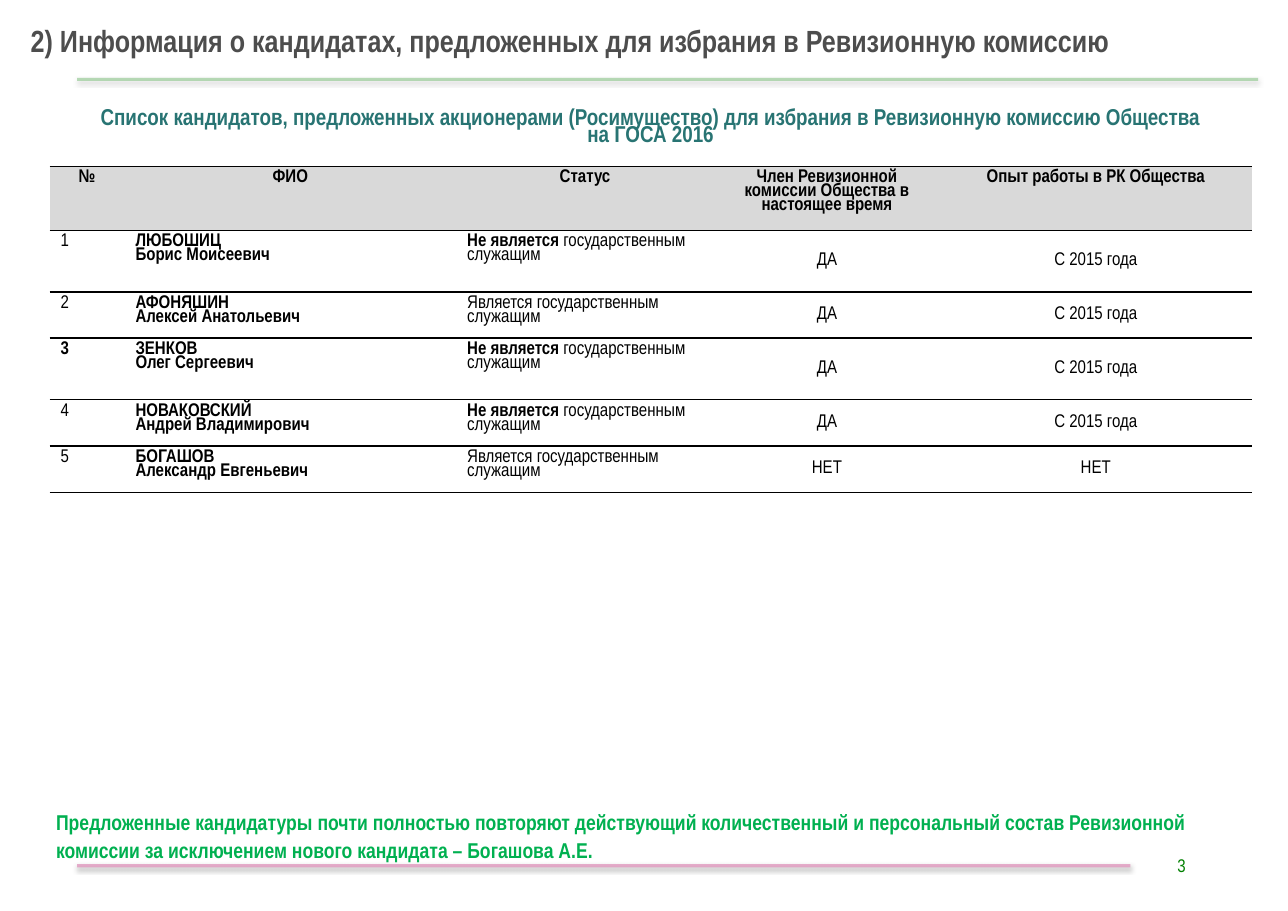
from dataclasses import dataclass

from lxml.etree import SubElement
from pptx import Presentation
from pptx.dml.color import RGBColor
from pptx.enum.shapes import MSO_CONNECTOR
from pptx.enum.text import MSO_ANCHOR, PP_ALIGN
from pptx.oxml import parse_xml
from pptx.oxml.ns import nsdecls, qn
from pptx.util import Inches, Pt


@dataclass(frozen=True)
class Theme:
    font: str = "Arial Narrow"
    black: str = "000000"
    gray: str = "4D4D4D"
    teal: str = "287473"
    lime: str = "00B050"
    green: str = "008000"
    band: str = "D9D9D9"
    mint: str = "9ACC99"
    pink: str = "DF8EB9"
    title: int = 20
    head: int = 15
    note: int = 14
    body: int = 12


class Page:
    """Draws styled elements on one slide, with lengths in percent of its size."""

    def __init__(self, deck, theme):
        self.deck, self.theme = deck, theme
        self.slide = deck.slides.add_slide(deck.slide_layouts[6])

    def wide(self, share):
        return round(self.deck.slide_width * share / 100)

    def high(self, share):
        return round(self.deck.slide_height * share / 100)

    def area(self, left, top, width, height):
        return self.wide(left), self.high(top), self.wide(width), self.high(height)

    def fill_text(self, frame, lines, size, color, bold=False, align=PP_ALIGN.LEFT, pitch=1.0, lead=""):
        for index, line in enumerate(lines):
            para = frame.paragraphs[0] if index == 0 else frame.add_paragraph()
            para.alignment, para.line_spacing = align, pitch
            font = para.font
            font.name, font.size, font.bold = self.theme.font, Pt(size), bold
            font.color.rgb = RGBColor.from_string(color)
            if lead:
                run = para.add_run()
                run.text, run.font.bold = lead, True
            para.add_run().text = line

    def text(self, area, line, size, color, inset=None, anchor=MSO_ANCHOR.TOP, **style):
        frame = self.slide.shapes.add_textbox(*self.area(*area)).text_frame
        frame.word_wrap, frame.vertical_anchor = True, anchor
        if inset is not None:
            frame.margin_left = Inches(inset)
            frame.margin_right = frame.margin_top = frame.margin_bottom = 0
        self.fill_text(frame, [line], size, color, **style)

    def rule(self, left, right, top, color):
        line = self.slide.shapes.add_connector(
            MSO_CONNECTOR.STRAIGHT, self.wide(left), self.high(top), self.wide(right), self.high(top))
        line.line.width = Pt(2)
        line.line.color.rgb = RGBColor.from_string(color)
        props = line.element.spPr
        SubElement(props.find(".//" + qn("a:srgbClr")), qn("a:alpha"), val="70000")
        props.append(parse_xml(
            f'<a:effectLst {nsdecls("a")}><a:outerShdw blurRad="{Pt(3.1)}" dist="{Pt(1.6)}" '
            f'dir="5400000" rotWithShape="0"><a:srgbClr val="{self.theme.black}">'
            '<a:alpha val="38000"/></a:srgbClr></a:outerShdw></a:effectLst>'))

    def table(self, left, top, cols, rows):
        frame = self.slide.shapes.add_table(
            len(rows), len(cols), *self.area(left, top, sum(cols), sum(rows)))
        table = frame.table
        table.first_row = table.horz_banding = False
        for col, share in zip(table.columns, cols):
            col.width = self.wide(share)
        for row, share in zip(table.rows, rows):
            row.height = self.high(share)
        for index, row in enumerate(table.rows):
            for cell in row.cells:
                cell.fill.background()
                self.edge(cell, index > 0)
        return table

    def edge(self, cell, top):
        solid = f'<a:solidFill><a:srgbClr val="{self.theme.black}"/></a:solidFill>'
        sides = {"lnL": False, "lnR": False, "lnT": top, "lnB": True}
        for index, (side, shown) in enumerate(sides.items()):
            fill = solid if shown else "<a:noFill/>"
            cell._tc.get_or_add_tcPr().insert(index, parse_xml(
                f'<a:{side} {nsdecls("a")} w="{Pt(1)}">{fill}</a:{side}>'))

    def cell(self, cell, lines, middle=False, fill=None, size=None, color=None, **style):
        cell.vertical_anchor = MSO_ANCHOR.MIDDLE if middle else MSO_ANCHOR.TOP
        if fill:
            cell.fill.solid()
            cell.fill.fore_color.rgb = RGBColor.from_string(fill)
        self.fill_text(cell.text_frame, lines, size or self.theme.body,
                       color or self.theme.black, pitch=0.8, **style)


HEADS = ["№", "ФИО", "Статус", "Член Ревизионной комиссии Общества в настоящее время",
         "Опыт работы в РК Общества"]
SINCE = "С 2015 года"
PEOPLE = [
    ("ЛЮБОШИЦ", "Борис Моисеевич", False, "ДА", SINCE),
    ("АФОНЯШИН", "Алексей Анатольевич", True, "ДА", SINCE),
    ("ЗЕНКОВ", "Олег Сергеевич", False, "ДА", SINCE),
    ("НОВАКОВСКИЙ", "Андрей Владимирович", False, "ДА", SINCE),
    ("БОГАШОВ", "Александр Евгеньевич", True, "НЕТ", "НЕТ"),
]


def main():
    theme = Theme()
    deck = Presentation()
    deck.slide_width, deck.slide_height = Inches(11.69), Inches(8.27)
    page = Page(deck, theme)
    center = PP_ALIGN.CENTER

    page.rule(5.99, 87.77, 95.04, theme.pink)
    page.rule(5.99, 97.69, 8.71, theme.mint)
    page.text((1.54, 2.42, 92.99, 6.89),
              "2) Информация о кандидатах, предложенных для избрания в Ревизионную комиссию",
              theme.title, theme.gray, inset=0.1, bold=True)
    page.text((88.28, 92.5, 4.62, 4.84), "3", theme.body, theme.green,
              anchor=MSO_ANCHOR.MIDDLE, align=PP_ALIGN.RIGHT)

    table = page.table(3.85, 10.04, [5.82, 25.75, 20.02, 17.54, 24.21],
                       [8.22, 6.89, 6.77, 5, 6.77, 5, 5])
    table.cell(0, 0).merge(table.cell(0, 4))
    page.cell(table.cell(0, 0),
              ["Список кандидатов, предложенных акционерами (Росимущество) для избрания "
               "в Ревизионную комиссию Общества", "на ГОСА 2016"],
              middle=True, size=theme.head, color=theme.teal, bold=True, align=center)
    for col, head in enumerate(HEADS):
        page.cell(table.cell(1, col), [head], fill=theme.band, bold=True, align=center)
    for number, (last, first, state, member, since) in enumerate(PEOPLE, 1):
        cells = [table.cell(number + 1, col) for col in range(len(HEADS))]
        page.cell(cells[0], [str(number)], bold=number == 3)
        page.cell(cells[1], [last, first], bold=True)
        if state:
            page.cell(cells[2], ["Является государственным служащим"])
        else:
            page.cell(cells[2], ["государственным служащим"], lead="Не является ")
        for cell, value in zip(cells[3:], (member, since)):
            page.cell(cell, [value], middle=True, align=center)

    page.text((3.51, 88.03, 93.67, 6.89),
              "Предложенные кандидатуры почти полностью повторяют действующий количественный "
              "и персональный состав Ревизионной комиссии за исключением нового кандидата "
              "– Богашова А.Е.", theme.note, theme.lime, bold=True, pitch=1.07)
    deck.save("out.pptx")


if __name__ == "__main__":
    main()
